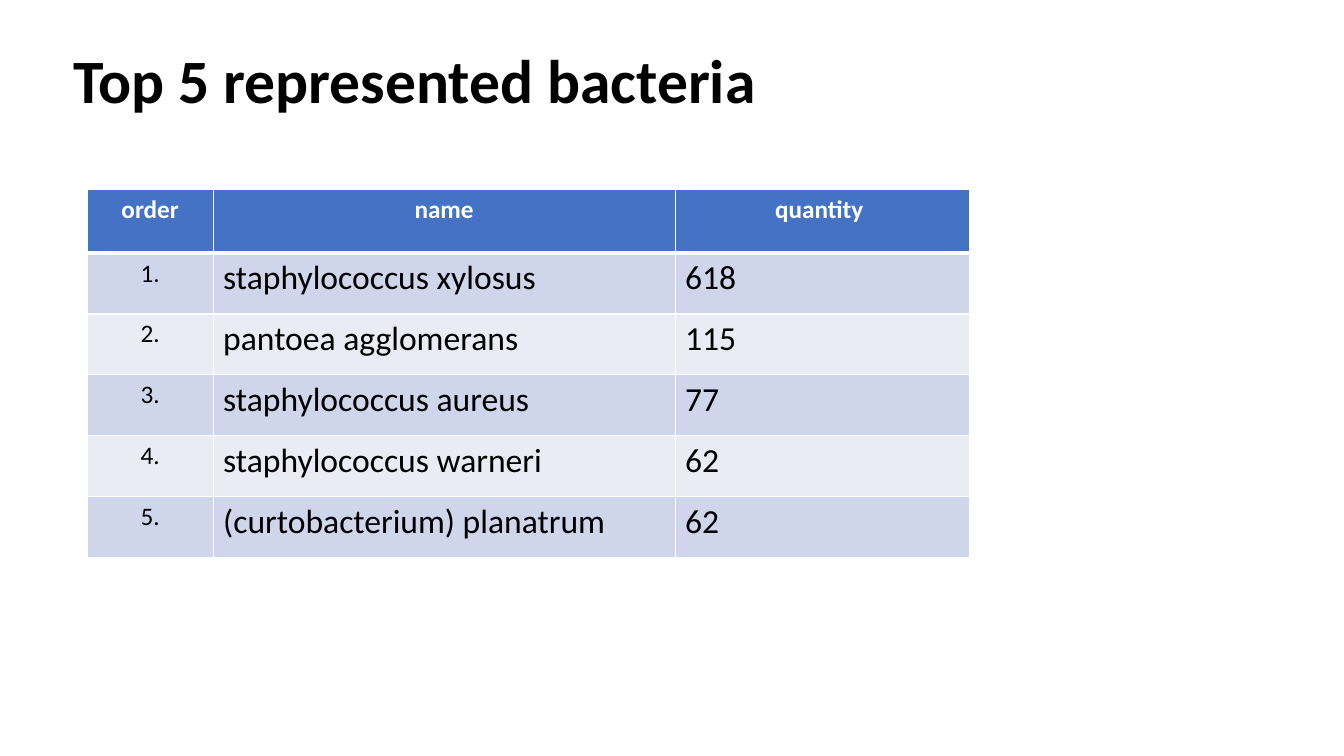
"""Build a slide that ranks the five most represented bacteria."""
import pptx
import pptx.dml.color
import pptx.enum.text
import pptx.oxml
import pptx.oxml.ns
import pptx.util

EMU_PER_PX = 9525
FONT = "Calibri"
BLACK = pptx.dml.color.RGBColor(0x00, 0x00, 0x00)
WHITE = pptx.dml.color.RGBColor(0xFF, 0xFF, 0xFF)
HEADER_BLUE = pptx.dml.color.RGBColor(0x44, 0x72, 0xC4)
BAND_DARK = pptx.dml.color.RGBColor(0xCF, 0xD5, 0xEA)
BAND_LIGHT = pptx.dml.color.RGBColor(0xE9, 0xEB, 0xF5)
LEFT = pptx.enum.text.PP_ALIGN.LEFT
CENTER = pptx.enum.text.PP_ALIGN.CENTER

HEADINGS = ("order", "name", "quantity ")
BACTERIA = (
    ("staphylococcus xylosus", 618),
    ("pantoea agglomerans", 115),
    ("staphylococcus aureus", 77),
    ("staphylococcus warneri", 62),
    ("(curtobacterium) planatrum", 62),
)


def px(length):
    return pptx.util.Emu(length * EMU_PER_PX)


class SlideBuilder:
    def __init__(self, deck):
        layout = deck.slide_layouts.get_by_name("Title Only")
        self.slide = deck.slides.add_slide(layout)

    def style(self, para, size, color, bold, align):
        para.alignment = align
        para.font.name = FONT
        para.font.size = pptx.util.Pt(size)
        para.font.bold = bold
        para.font.color.rgb = color

    def title(self, text, left, top, width, height):
        box = self.slide.shapes.title
        box.left, box.top, box.width, box.height = map(px, (left, top, width, height))
        frame = box.text_frame
        frame.text = text
        frame.vertical_anchor = pptx.enum.text.MSO_ANCHOR.MIDDLE
        para = frame.paragraphs[0]
        para.line_spacing = 0.9
        self.style(para, 44, BLACK, True, LEFT)

    def borders(self, cell, widths):
        properties = cell._tc.get_or_add_tcPr()
        for side, points in zip("LRTB", widths):
            properties.append(pptx.oxml.parse_xml(
                f'<a:ln{side} {pptx.oxml.ns.nsdecls("a")} w="{pptx.util.Pt(points)}">'
                f'<a:solidFill><a:srgbClr val="{WHITE}"/></a:solidFill></a:ln{side}>'
            ))

    def table(self, rows, left, top, column_widths, row_heights):
        frame = self.slide.shapes.add_table(
            len(rows), len(column_widths), px(left), px(top),
            px(sum(column_widths)), px(sum(row_heights)),
        )
        table = frame.table
        for column, width in zip(table.columns, column_widths):
            column.width = px(width)
        for row_index, (values, height) in enumerate(zip(rows, row_heights)):
            table.rows[row_index].height = px(height)
            header = row_index == 0
            band = BAND_DARK if row_index % 2 else BAND_LIGHT
            for column_index, value in enumerate(values):
                cell = table.cell(row_index, column_index)
                cell.text = str(value)
                small = header or column_index == 0
                self.style(
                    cell.text_frame.paragraphs[0], 18 if small else 24,
                    WHITE if header else BLACK, header, CENTER if small else LEFT,
                )
                self.borders(cell, (1, 1, 3 if row_index == 1 else 1, 3 if header else 1))
                cell.fill.solid()
                cell.fill.fore_color.rgb = HEADER_BLUE if header else band


def main():
    deck = pptx.Presentation()
    deck.slide_width, deck.slide_height = px(1280), px(720)
    page = SlideBuilder(deck)
    page.title("Top 5 represented bacteria", 60, 10, 1249, 139)
    ranking = [(f"{rank}.", *entry) for rank, entry in enumerate(BACTERIA, 1)]
    page.table([HEADINGS, *ranking], 83, 180, (120, 440, 280), [61] + [58] * len(ranking))
    deck.save("out.pptx")


if __name__ == "__main__":
    main()
